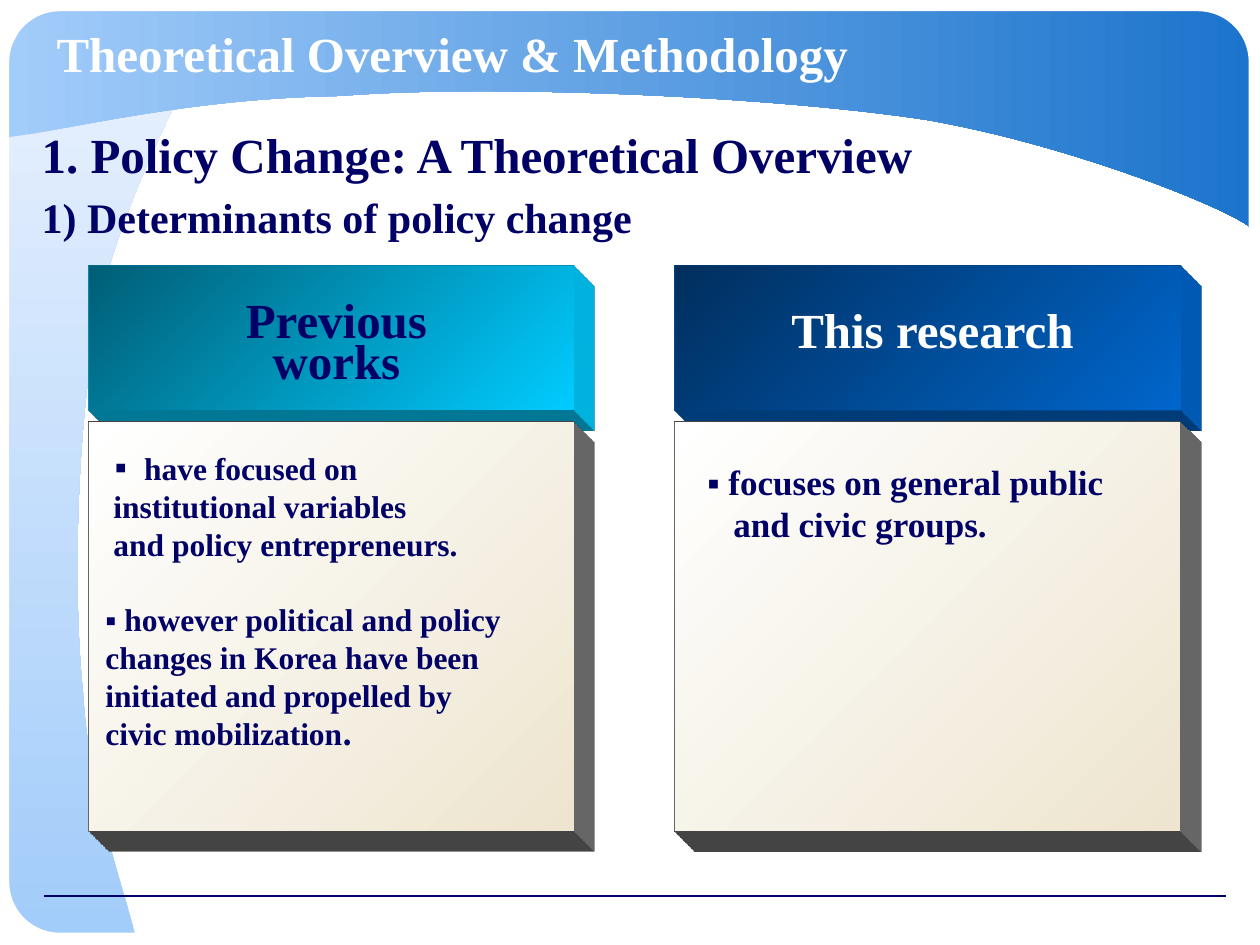
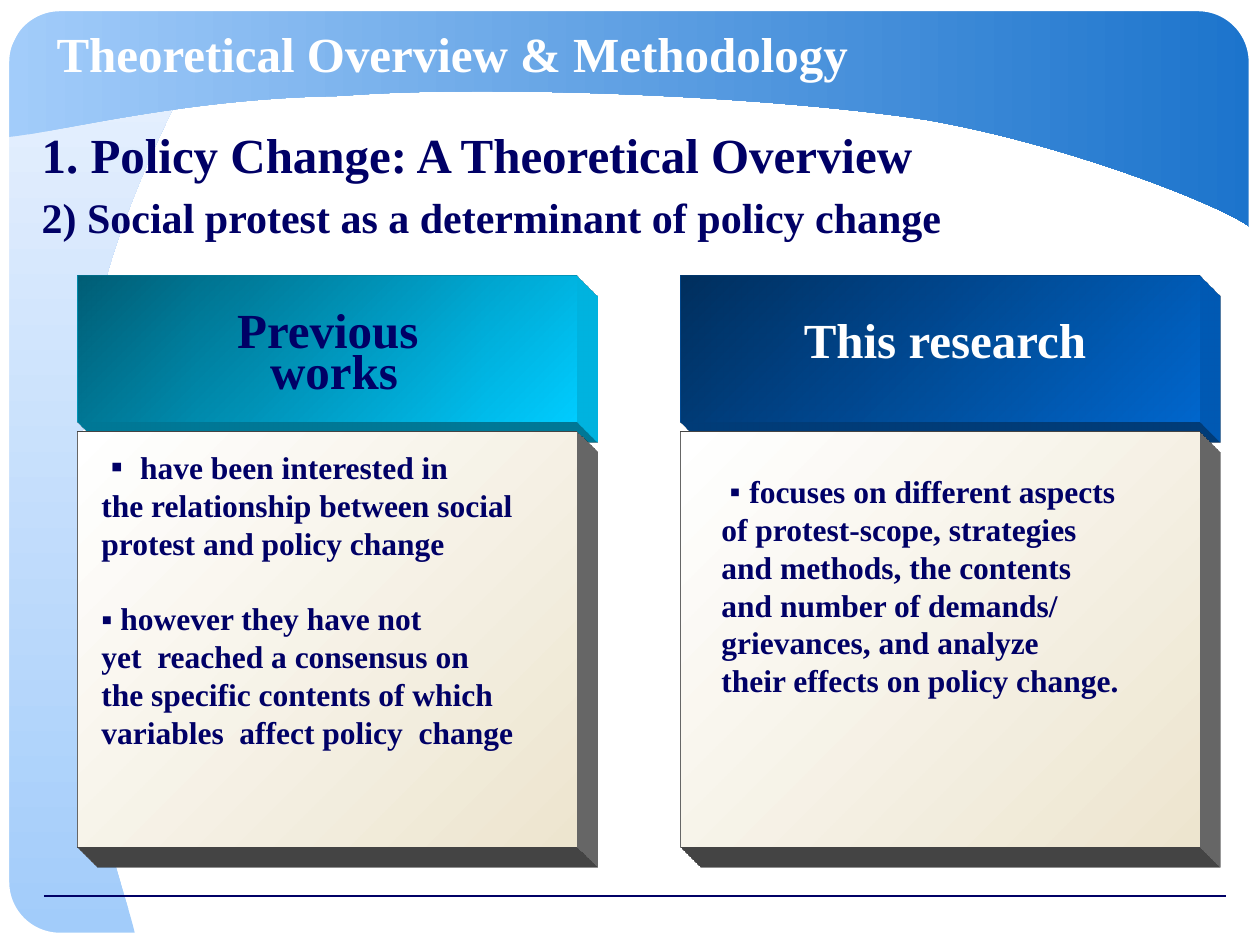
from dataclasses import dataclass

from lxml import etree
from pptx import Presentation
from pptx.dml.color import RGBColor
from pptx.enum.shapes import MSO_CONNECTOR, MSO_SHAPE
from pptx.enum.text import MSO_ANCHOR, PP_ALIGN
from pptx.oxml import parse_xml
from pptx.oxml.ns import nsdecls, qn
from pptx.util import Emu, Pt

LEFT, CENTER = PP_ALIGN.LEFT, PP_ALIGN.CENTER
MIDDLE = MSO_ANCHOR.MIDDLE
RECT, ROUND_RECT = MSO_SHAPE.RECTANGLE, MSO_SHAPE.ROUNDED_RECTANGLE
STRAIGHT = MSO_CONNECTOR.STRAIGHT

PX = 914400 / 126  # EMU per px
WIDTH, HEIGHT = 1260, 945
SERIF, SYMBOL = "Times New Roman", "Noto Sans CJK KR"
NAVY, WHITE = "000066", "FFFFFF"
LINE_FACTOR = 1.2
DEPTH = 59  # extrusion of the blocks, px

# Block colours: gradient start, gradient end, extrusion
TEAL = ("005E76", "00CCFF", "00CCFF")
BLUE = ("002F5E", "0066CC", "0066CC")
CREAM = ("FFFFFF", "EDE5CF", "747474")

TITLE = "Theoretical Overview & Methodology"
SECTION = "1. Policy Change: A Theoretical Overview"

# Frame outlines: a pair is a straight step, three pairs are a Bezier curve.
# The side band lies on its side and is turned upright when drawn.
SIDE_BAND = [(-341, 496),
             ((-301, 487), (-205, 450), (-99, 444)),
             ((7, 433), (181, 438), (295, 462)),
             ((404, 487), (561, 569), (573, 587)),
             (573, 369), (-341, 367)]
TOP_WAVE = [(9, 137),
            ((64, 131), (188, 98), (341, 96)),
            ((486, 84), (771, 96), (927, 120)),
            ((1076, 146), (1237, 212), (1252, 229)),
            (1254, 10), (9, 9)]
BOTTOM_LEFT = [(60, 944), (24, 926), (6, 907), (0, 879), (0, 945)]
TOP_LEFT = [(0, 69), ((5, 62), (16, 33), (26, 21)),
            ((35, 10), (63, 5), (60, 0)), (0, 1)]
BOTTOM_RIGHT = [(1259, 882), (1244, 914), (1223, 934), (1205, 945), (1260, 944)]
TOP_RIGHT = [(1198, 1), ((1205, 4), (1225, 3), (1242, 21)),
             ((1259, 40), (1256, 76), (1259, 72)), (1259, 1)]


@dataclass
class Line:
    text: str
    bullet: str = ""      # lead-in set in the symbol font
    bullet_size: int = 18
    ending: str = ""      # closing mark set in the symbol font
    indent: int = 0       # px
    gap: int = 0          # empty lines above


def px(value):
    return Emu(round(value * PX))


def rgb(value):
    return RGBColor.from_string(value)


def gradient(shape, start, end, angle):
    shape.fill.gradient()
    shape.fill.gradient_angle = angle
    for stop, color in zip(shape.fill.gradient_stops, (start, end)):
        stop.color.rgb = rgb(color)


def solid(shape, color):
    shape.fill.solid()
    shape.fill.fore_color.rgb = rgb(color)


def outline_line(shape, color, width):
    shape.line.color.rgb = rgb(color)
    shape.line.width = Pt(width)


def plain(shape):
    shape.shadow.inherit = False
    shape.line.fill.background()
    return shape


def outline_shape(slide, outline):
    """Freeform whose three-pair steps become Bezier curves."""
    steps = [[part] if len(part) == 2 else list(part) for part in outline[1:]]
    builder = slide.shapes.build_freeform(*outline[0], scale=PX)
    builder.add_line_segments([point for step in steps for point in step])
    shape = plain(builder.convert_to_shape())
    segments = iter(list(shape._element.iter(qn("a:lnTo"))))
    for step in steps:
        first, *others = [next(segments) for _ in step]
        if others:
            first.tag = qn("a:cubicBezTo")
            for other in others:
                first.append(other[0])
                other.getparent().remove(other)
    return shape


def add_run(paragraph, text, size, color, font=SERIF):
    run = paragraph.add_run()
    run.text = text
    run.font.name, run.font.size, run.font.bold = font, Pt(size), True
    run.font.color.rgb = rgb(color)


def paragraphs(frame, count):
    return [frame.paragraphs[0]] + [frame.add_paragraph() for _ in range(count - 1)]


def place(shape, left, top, width, height):
    shape.left, shape.top, shape.width, shape.height = map(
        px, (left, top, width, height))


def text_box(slide, left, top, width, height):
    frame = slide.shapes.add_textbox(*map(px, (left, top, width, height))).text_frame
    frame.word_wrap = True
    return frame


def draw_frame(slide):
    """Bands, footer rule, rounded border and corners."""
    band = outline_shape(slide, SIDE_BAND)
    band.rotation = 270
    gradient(band, "A2CCFA", "EAF2FE", 0)
    gradient(outline_shape(slide, TOP_WAVE), "A2CCFA", "1C74CC", 0)

    rule = slide.shapes.add_connector(STRAIGHT, *map(px, (44, 896, 1226, 896)))
    outline_line(rule, NAVY, 0.75)
    etree.SubElement(rule._element.spPr, qn("a:effectLst"))

    solid(outline_shape(slide, BOTTOM_LEFT), WHITE)
    border = plain(slide.shapes.add_shape(ROUND_RECT, *map(px, (4, 6, 1250, 932))))
    border.adjustments[0] = 0.06
    border.fill.background()
    outline_line(border, WHITE, 6)
    for corner in (TOP_LEFT, BOTTOM_RIGHT, TOP_RIGHT):
        solid(outline_shape(slide, corner), WHITE)


def share_frame(prs, layout):
    """Draw the frame once and move it into the layout."""
    slide = prs.slides.add_slide(layout)
    held = {shape.shape_id for shape in slide.placeholders}
    draw_frame(slide)
    for shape in list(slide.shapes):
        if shape.shape_id not in held:
            element = shape._element
            element.xpath(".//p:cNvPr")[0].set("id", str(100 + shape.shape_id))
            layout.shapes._spTree.append(element)
    return slide


def headings(slide, topic):
    title = slide.shapes.title
    place(title, 44, 16, 1160, 74)
    title.text_frame.vertical_anchor = MIDDLE
    paragraph = title.text_frame.paragraphs[0]
    paragraph.alignment = LEFT
    add_run(paragraph, TITLE, 28, WHITE)

    body = slide.placeholders[1]
    place(body, 29, 118, 1231, 771)
    rows = ((SECTION, 28), (topic, 24))
    for paragraph, (text, size) in zip(paragraphs(body.text_frame, 2), rows):
        paragraph.line_spacing = Pt(size * LINE_FACTOR)
        add_run(paragraph, text, size, NAVY)
        etree.SubElement(paragraph._p.get_or_add_pPr(), qn("a:buNone"))


def block(slide, left, top, width, height, colors):
    """Gradient rectangle extruded towards the bottom right."""
    start, end, side = colors
    front = plain(slide.shapes.add_shape(RECT, *map(px, (left, top, width, height))))
    gradient(front, start, end, 315)
    properties = front._element.spPr
    properties.append(parse_xml(
        f'<a:scene3d {nsdecls("a")}><a:camera prst="legacyObliqueBottomRight"/>'
        '<a:lightRig rig="legacyFlat3" dir="b"/></a:scene3d>'))
    properties.append(parse_xml(
        f'<a:sp3d {nsdecls("a")} extrusionH="{px(DEPTH)}" prstMaterial="legacyMatte">'
        '<a:bevelT w="13500" h="13500" prst="angle"/>'
        '<a:bevelB w="13500" h="13500" prst="angle"/>'
        f'<a:extrusionClr><a:srgbClr val="{side}"/></a:extrusionClr></a:sp3d>'))


def column(slide, left, width, rows, colors):
    head_top, head_height, card_top, card_height = rows
    block(slide, left, head_top, width, head_height, colors)
    block(slide, left, card_top, width, card_height, CREAM)


def heading_text(slide, box, lines, color):
    frame = text_box(slide, *box)
    for paragraph, text in zip(paragraphs(frame, len(lines)), lines):
        paragraph.alignment = CENTER
        paragraph.line_spacing = Pt(28 * LINE_FACTOR * 0.7)
        add_run(paragraph, text, 28, color)


def card_text(slide, box, lines, size=18):
    frame = text_box(slide, *box)
    pitch = Pt(size * LINE_FACTOR)
    for paragraph, line in zip(paragraphs(frame, len(lines)), lines):
        paragraph.line_spacing = pitch
        if line.gap:
            paragraph.space_before = line.gap * pitch
        if line.indent:
            paragraph._p.get_or_add_pPr().set("marL", str(px(line.indent)))
        if line.bullet:
            add_run(paragraph, line.bullet, line.bullet_size, NAVY, SYMBOL)
        add_run(paragraph, line.text, size, NAVY)
        if line.ending:
            add_run(paragraph, line.ending, size, NAVY, SYMBOL)


def determinants(slide):
    headings(slide, "1) Determinants of policy change")
    rows = (266, 144, 421, 410)
    column(slide, 88, 486, rows, TEAL)
    heading_text(slide, (166, 301, 341, 97), ["Previous", "works"], NAVY)
    card_text(slide, (93, 443, 485, 318), [
        Line("have focused on", bullet="▪ "),
        Line("institutional variables", indent=8),
        Line("and policy entrepreneurs.", indent=8),
        Line("▪ however political and policy", gap=1),
        Line("changes in Korea have been"),
        Line("initiated and propelled by"),
        Line("civic mobilization", ending="."),
    ])
    column(slide, 675, 506, rows, BLUE)
    heading_text(slide, (762, 311, 341, 55), ["This research"], WHITE)
    card_text(slide, (695, 454, 466, 97), [
        Line("▪ focuses on general public"),
        Line("and civic groups.", indent=26),
    ], size=20)


def social_protest(slide):
    headings(slide, "2) Social protest as a determinant of policy change")
    rows = (276, 146, 432, 415)
    column(slide, 78, 499, rows, TEAL)
    heading_text(slide, (158, 311, 352, 97), ["Previous ", "works"], NAVY)
    card_text(slide, (89, 442, 499, 318), [
        Line("have been interested in", bullet="▪ "),
        Line("the relationship between social"),
        Line("protest and policy change"),
        Line("▪ however they have not", gap=1),
        Line("yet  reached a consensus on"),
        Line("the specific contents of which"),
        Line("variables  affect policy  change"),
    ])
    column(slide, 681, 519, rows, BLUE)
    heading_text(slide, (769, 321, 352, 55), ["This research"], WHITE)
    card_text(slide, (709, 466, 471, 310), [
        Line("focuses on different aspects", bullet="▪", bullet_size=16),
        Line("of protest-scope, strategies"),
        Line("and methods, the contents"),
        Line("and number of demands/"),
        Line("grievances, and analyze"),
        Line("their effects on policy change."),
    ])


def main():
    prs = Presentation()
    prs.slide_width, prs.slide_height = px(WIDTH), px(HEIGHT)
    layout = prs.slide_layouts[1]
    determinants(share_frame(prs, layout))
    social_protest(prs.slides.add_slide(layout))
    prs.save("out.pptx")


if __name__ == "__main__":
    main()
